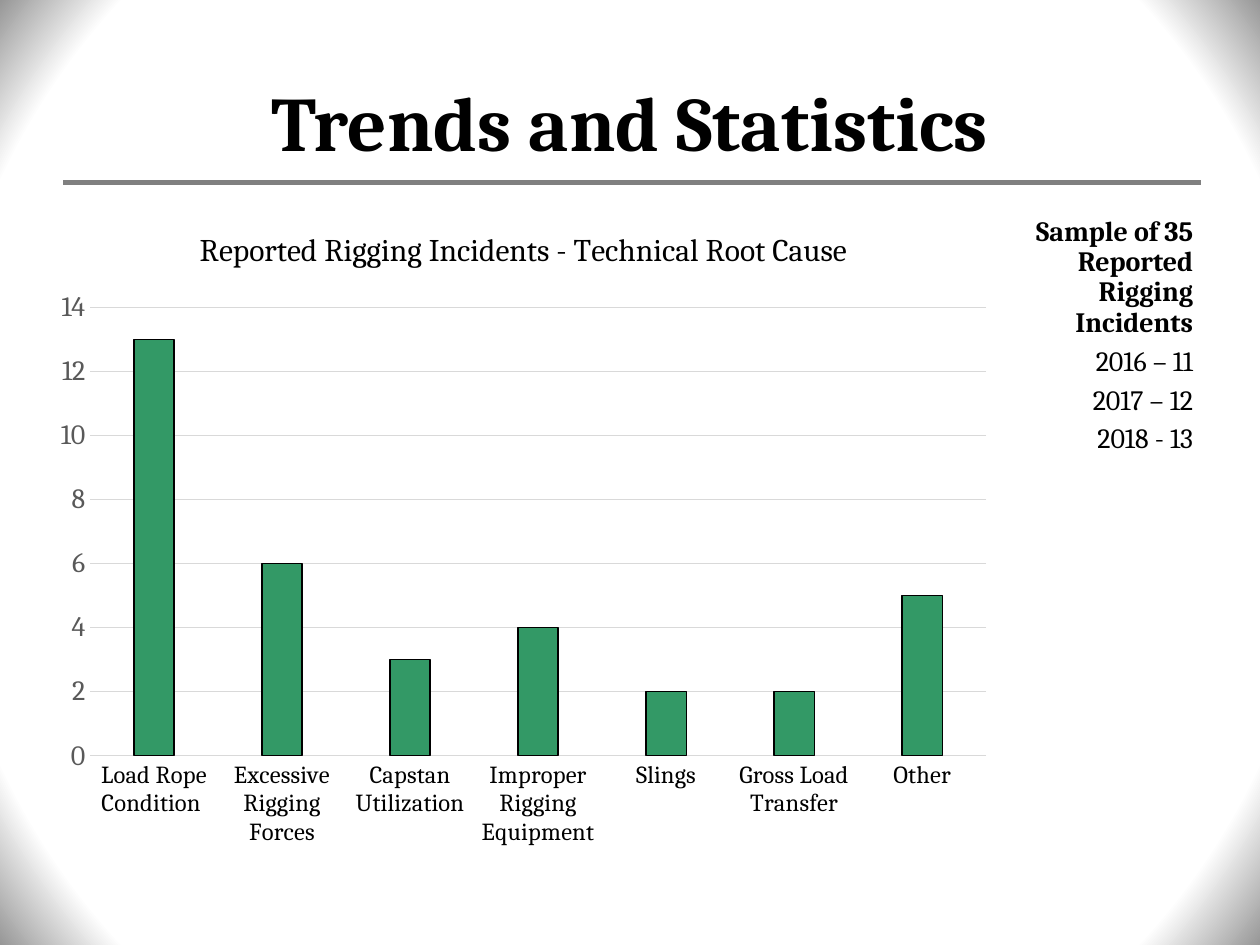
from lxml.etree import SubElement
from pptx import Presentation
from pptx.chart.data import CategoryChartData
from pptx.dml.color import RGBColor
from pptx.enum.chart import XL_CHART_TYPE, XL_TICK_MARK
from pptx.enum.shapes import MSO_CONNECTOR
from pptx.enum.text import MSO_ANCHOR, PP_ALIGN
from pptx.oxml import parse_xml
from pptx.oxml.ns import nsdecls, qn
from pptx.util import Inches, Pt

BLACK = RGBColor(0, 0, 0)
GRAY = RGBColor(0x80, 0x80, 0x80)
DARK = RGBColor(0x59, 0x59, 0x59)
PALE = RGBColor(0xD9, 0xD9, 0xD9)
GREEN = RGBColor(0x33, 0x99, 0x66)


class Deck:
    face = "Cambria"

    def __init__(self, wide, high):
        self.show = Presentation()
        self.show.slide_width = Inches(wide)
        self.show.slide_height = Inches(high)
        self.slide = self.show.slides.add_slide(self.show.slide_layouts[6])

    def style(self, font, size, color=BLACK, bold=False):
        font.name = self.face
        font.size = Pt(size)
        font.color.rgb = color
        font.bold = bold

    def glow(self, stops):
        self.slide.background.fill.gradient()
        old = self.slide.element.find(".//" + qn("a:gradFill"))
        marks = "".join(
            f'<a:gs pos="{at * 1000}"><a:srgbClr val="{color}"/></a:gs>'
            for at, color in stops
        )
        new = parse_xml(
            f'<a:gradFill {nsdecls("a")} rotWithShape="1"><a:gsLst>{marks}</a:gsLst>'
            '<a:path path="circle"><a:fillToRect l="50000" t="50000" '
            'r="50000" b="50000"/></a:path></a:gradFill>'
        )
        old.getparent().replace(old, new)

    def rule(self, left, right, top):
        line = self.slide.shapes.add_connector(
            MSO_CONNECTOR.STRAIGHT, Inches(left), Inches(top), Inches(right), Inches(top)
        )
        line.line.color.rgb = GRAY
        line.line.width = Pt(3)
        props = line._element.find(qn("p:spPr"))
        SubElement(props, qn("a:effectLst"))

    def text(self, box, lines, size, align, anchor=MSO_ANCHOR.TOP, inset=0.1, space=None, before=0):
        frame = self.slide.shapes.add_textbox(*map(Inches, box)).text_frame
        frame.word_wrap = True
        frame.vertical_anchor = anchor
        frame.margin_left = frame.margin_right = Inches(inset)
        frame.margin_top = frame.margin_bottom = Inches(inset / 2)
        for spot, (words, bold) in enumerate(lines):
            para = frame.add_paragraph() if spot else frame.paragraphs[0]
            para.alignment = align
            para.line_spacing = space
            para.space_before = Pt(before)
            run = para.add_run()
            run.text = words
            self.style(run.font, size, bold=bold)

    def chart(self, box, title, name, pairs):
        data = CategoryChartData()
        data.categories = [label for label, count in pairs]
        data.add_series(name, [count for label, count in pairs])
        chart = self.slide.shapes.add_chart(
            XL_CHART_TYPE.COLUMN_CLUSTERED, *map(Inches, box), data
        ).chart
        chart.font.name = "Calibri"
        chart.font.size = Pt(12)
        chart.font.color.rgb = BLACK
        chart.has_legend = False
        chart.has_title = True
        run = chart.chart_title.text_frame.paragraphs[0].add_run()
        run.text = title
        self.style(run.font, 18)
        chart.chart_title.include_in_layout = False
        plot = chart.plots[0]
        plot.vary_by_categories = False
        plot.gap_width = 219
        plot.overlap = -27
        bars = plot.series[0].format
        bars.fill.solid()
        bars.fill.fore_color.rgb = GREEN
        self.edge(bars.line, BLACK)
        low, side = chart.category_axis, chart.value_axis
        for axis, size, color in ((low, 14, BLACK), (side, 16, DARK)):
            axis.major_tick_mark = axis.minor_tick_mark = XL_TICK_MARK.NONE
            self.style(axis.tick_labels.font, size, color)
        self.edge(low.format.line, PALE)
        side.format.line.fill.background()
        side.minimum_scale, side.maximum_scale, side.major_unit = 0, 14, 2
        self.edge(side.major_gridlines.format.line, PALE)

    def edge(self, line, color):
        line.color.rgb = color
        line.width = Pt(0.75)


def main():
    deck = Deck(10, 7.5)
    deck.glow([(88, "FFFFFF"), (100, "979797")])
    deck.rule(0.5, 9.53, 1.45)
    deck.text(
        (0.5, 0.5, 9, 0.92), [("Trends and Statistics", True)],
        44, PP_ALIGN.CENTER, MSO_ANCHOR.MIDDLE,
    )
    deck.chart(
        (0.33, 1.61, 7.65, 5.22),
        "Reported Rigging Incidents - Technical Root Cause",
        "Series 1",
        [
            ("Load Rope Condition ", 13),
            ("Excessive Rigging Forces", 6),
            ("Capstan Utilization", 3),
            ("Improper Rigging Equipment", 4),
            ("Slings", 2),
            ("Gross Load Transfer", 2),
            ("Other", 5),
        ],
    )
    deck.text(
        (8.08, 1.69, 1.46, 2.39),
        [
            ("Sample of 35 Reported Rigging Incidents", True),
            ("2016 – 11", False),
            ("2017 – 12", False),
            ("2018 - 13", False),
        ],
        16, PP_ALIGN.RIGHT, inset=0.07, space=0.9, before=5,
    )
    deck.show.save("out.pptx")


if __name__ == "__main__":
    main()
